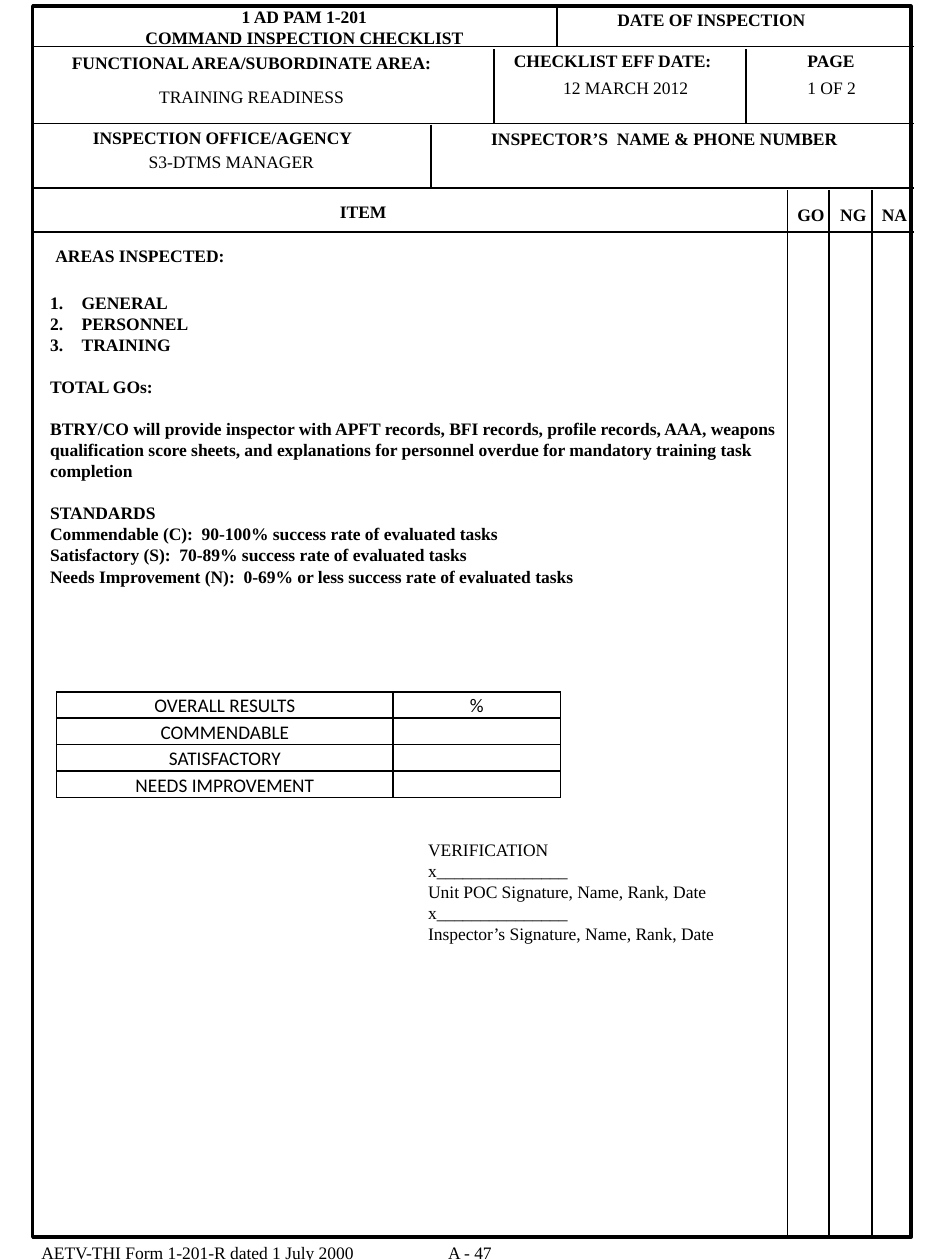
from lxml import etree
from pptx import Presentation
from pptx.dml.color import RGBColor
from pptx.enum.shapes import MSO_CONNECTOR, MSO_SHAPE
from pptx.enum.text import MSO_ANCHOR, PP_ALIGN
from pptx.oxml.ns import qn
from pptx.util import Inches, Pt

BLACK = RGBColor(0x00, 0x00, 0x00)
STRAIGHT = MSO_CONNECTOR.STRAIGHT
RECTANGLE = MSO_SHAPE.RECTANGLE
LEFT, CENTER = PP_ALIGN.LEFT, PP_ALIGN.CENTER
BOTTOM = MSO_ANCHOR.BOTTOM
FORM_FONT, TABLE_FONT = "Times New Roman", "Calibri"
LINE_HEIGHT = 12  # points taken by one line of 10 pt text


def add_text(paragraph, text, bold=False, size=10, font=FORM_FONT):
    run = paragraph.add_run()
    run.text = text
    run.font.name = font
    run.font.size = Pt(size)
    run.font.bold = bold
    run.font.color.rgb = BLACK


prs = Presentation()
prs.slide_width, prs.slide_height = Inches(7.5), Inches(10)
slide = prs.slides.add_slide(prs.slide_layouts[6])
shapes = slide.shapes

# Form frame
frame = shapes.add_shape(RECTANGLE, Inches(0.26), Inches(0.05), Inches(6.97), Inches(9.77))
frame.shadow.inherit = False
frame.fill.background()
frame.line.color.rgb = BLACK
frame.line.width = Pt(2)

# Rules: full-width rows, header dividers, score columns
rules = [(0.26, y, 7.25, y) for y in (0.37, 0.98, 1.49, 1.84)]
rules += [(4.42, 0.05, 4.42, 0.37), (3.92, 0.39, 3.92, 0.98),
          (5.92, 0.39, 5.92, 0.98), (3.42, 0.99, 3.42, 1.49)]
rules += [(x, 1.51, x, 9.82) for x in (6.25, 6.58, 6.92)]
for ends in rules:
    rule = shapes.add_connector(STRAIGHT, *[Inches(v) for v in ends])
    rule.line.color.rgb = BLACK
    rule.line.width = Pt(1)
    etree.SubElement(rule._element.spPr, qn("a:effectLst"))

# Header captions, header values and footer: left, top, width, align, bold, lines
labels = [
    (1.05, 0, 2.73, CENTER, True, ["1 AD PAM 1-201", "COMMAND INSPECTION CHECKLIST"]),
    (4.79, 0.02, 1.71, CENTER, True, ["DATE OF INSPECTION"]),
    (0.43, 0.36, 3.13, CENTER, True, ["FUNCTIONAL AREA/SUBORDINATE AREA:"]),
    (3.98, 0.35, 1.79, LEFT, True, ["CHECKLIST EFF DATE:"]),
    (6.14, 0.35, 0.91, CENTER, True, ["PAGE"]),
    (0.6, 0.96, 2.33, CENTER, True, ["INSPECTION OFFICE/AGENCY"]),
    (3.8, 0.97, 2.96, LEFT, True, ["INSPECTOR’S  NAME & PHONE NUMBER"]),
    (2.6, 1.55, 0.57, LEFT, True, ["ITEM"]),
    (6.23, 1.57, 0.42, LEFT, True, ["GO"]),
    (6.57, 1.57, 0.41, LEFT, True, ["NG"]),
    (6.9, 1.57, 0.4, LEFT, True, ["NA"]),
    (1.15, 0.63, 1.69, CENTER, False, ["TRAINING READINESS"]),
    (4.36, 0.56, 1.21, CENTER, False, ["12 MARCH 2012"]),
    (6.06, 0.56, 1.08, CENTER, False, ["1 OF 2"]),
    (0.25, 1.15, 3.17, CENTER, False, ["S3-DTMS MANAGER"]),
    (0.23, 9.81, 2.7, LEFT, False, ["AETV-THI Form 1-201-R dated 1 July 2000"]),
    (3.41, 9.81, 0.64, CENTER, False, ["A - 47"]),
]
for left, top, width, align, bold, lines in labels:
    height = 0.1 + 0.17 * len(lines)
    label = shapes.add_textbox(Inches(left), Inches(top), Inches(width), Inches(height))
    label.text_frame.word_wrap = False
    for i, line in enumerate(lines):
        paragraph = label.text_frame.paragraphs[0] if i == 0 else label.text_frame.add_paragraph()
        paragraph.alignment = align
        add_text(paragraph, line, bold)

# Checklist body: blank lines before, kind, text
body_lines = [
    (0, "heading", "AREAS INSPECTED:"),
    (1.2, "numbered", "GENERAL"),
    (0, "numbered", "PERSONNEL"),
    (0, "numbered", "TRAINING"),
    (1, "plain", "TOTAL GOs:"),
    (1, "plain", "BTRY/CO will provide inspector with APFT records, BFI records, profile records, "
     "AAA, weapons qualification score sheets, and explanations for personnel overdue for "
     "mandatory training task completion"),
    (1, "plain", "STANDARDS"),
    (0, "plain", "Commendable (C):  90-100% success rate of evaluated tasks"),
    (0, "plain", "Satisfactory (S):  70-89% success rate of evaluated tasks"),
    (0, "plain", "Needs Improvement (N):  0-69% or less success rate of evaluated tasks"),
    (12, "signature", "VERIFICATION"),
    (0, "signature", "x_______________"),
    (0, "signature", "Unit POC Signature, Name, Rank, Date"),
    (0, "signature", "x_______________"),
    (0, "signature", "Inspector’s Signature, Name, Rank, Date"),
]
body = shapes.add_textbox(Inches(0.3), Inches(1.87), Inches(5.97), Inches(7.71)).text_frame
body.word_wrap = True
for i, (gap, kind, line) in enumerate(body_lines):
    paragraph = body.paragraphs[0] if i == 0 else body.add_paragraph()
    paragraph.space_before = Pt(gap * LINE_HEIGHT)
    properties = paragraph._p.get_or_add_pPr()
    if kind == "heading":
        add_text(paragraph, " ", size=12)
    elif kind == "numbered":
        properties.set("marL", str(Inches(0.25)))
        properties.set("indent", str(-Inches(0.25)))
        etree.SubElement(properties, qn("a:buFont"), typeface=FORM_FONT)
        etree.SubElement(properties, qn("a:buAutoNum"), type="arabicPeriod")
    elif kind == "signature":
        properties.set("marL", str(Inches(3)))
    add_text(paragraph, line, bold=kind != "signature")

# Overall results table
results = [("OVERALL RESULTS", "%"), ("COMMENDABLE", ""),
           ("SATISFACTORY", ""), ("NEEDS IMPROVEMENT", "")]
table = shapes.add_table(4, 2, Inches(0.45), Inches(5.49), Inches(4), Inches(0.84)).table
table.first_row = table.horz_banding = False
table.columns[0].width, table.columns[1].width = Inches(2.67), Inches(1.33)
for r, row in enumerate(results):
    table.rows[r].height = Inches(0.21)
    for c, text in enumerate(row):
        cell = table.cell(r, c)
        cell.vertical_anchor = BOTTOM
        cell.margin_left = cell.margin_right = Inches(0.07)
        cell.margin_top = cell.margin_bottom = 0
        paragraph = cell.text_frame.paragraphs[0]
        paragraph.alignment = CENTER
        if text:
            add_text(paragraph, text, size=11, font=TABLE_FONT)
        else:
            etree.SubElement(paragraph._p, qn("a:endParaRPr"), sz="1100")
        for side in ("lnL", "lnR", "lnT", "lnB"):
            border = etree.SubElement(cell._tc.get_or_add_tcPr(), qn(f"a:{side}"), w=str(Pt(1)))
            border_fill = etree.SubElement(border, qn("a:solidFill"))
            etree.SubElement(border_fill, qn("a:srgbClr"), val=str(BLACK))
        cell.fill.background()

prs.save("out.pptx")
